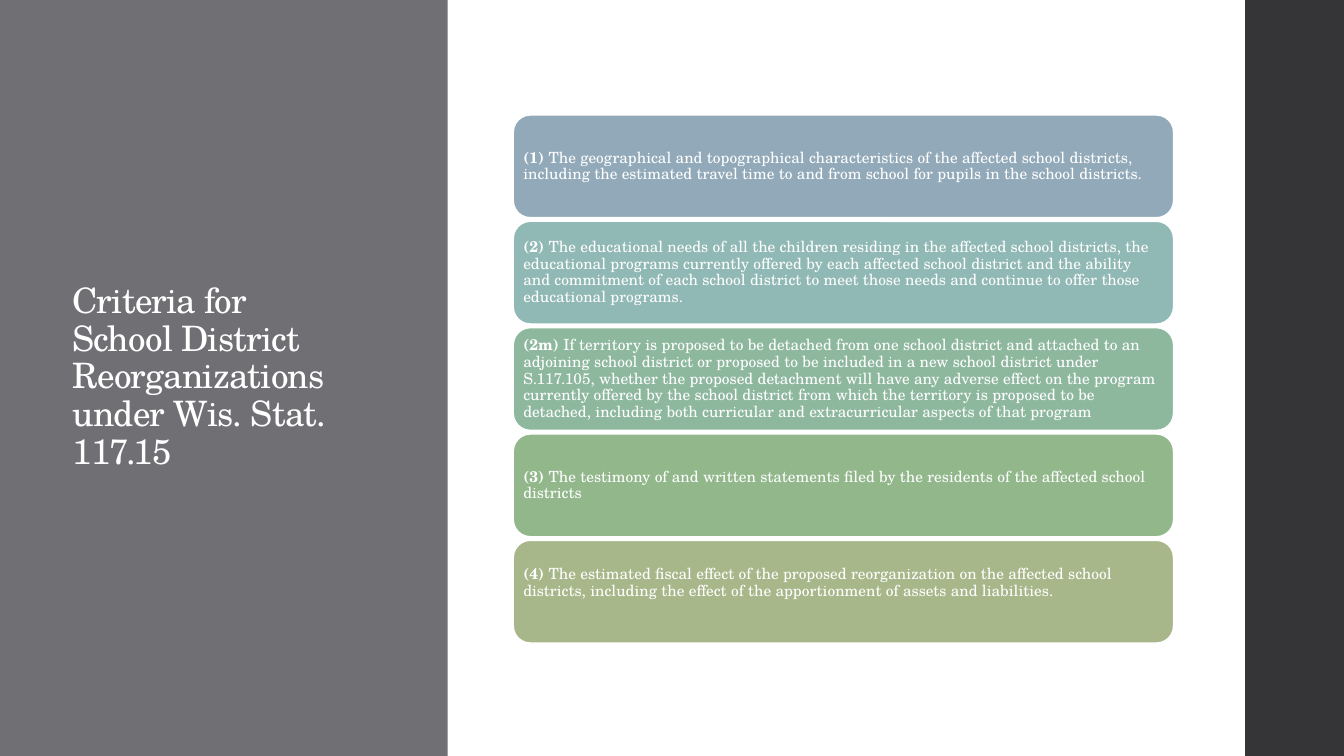
from pptx import Presentation
from pptx.dml.color import RGBColor
from pptx.enum.shapes import MSO_SHAPE as SHAPE
from pptx.enum.text import MSO_ANCHOR as ANCHOR, PP_ALIGN as ALIGN
from pptx.util import Inches, Pt

THEME = {
    "font": "TeX Gyre Schola",
    "text": "FFFFFF",
    "panel": "6F6F74",
    "edge": "353537",
    "cards": ["92A9B9", "90B8B4", "8EB89E", "91B78B", "A7B789"],
    "title_size": 25,
    "card_size": 11,
}


def add_run(p, text, size, bold=False, spacing=None):
    r = p.add_run()
    r.text = text
    r.font.name = THEME["font"]
    r.font.size = Pt(size)
    r.font.bold = bold
    r.font.color.rgb = RGBColor.from_string(THEME["text"])
    if spacing is not None:
        r._r.get_or_add_rPr().set("spc", str(int(spacing * 100)))


prs = Presentation()
prs.slide_width = Inches(13.33)
prs.slide_height = Inches(7.5)
s = prs.slides.add_slide(prs.slide_layouts[6])

for left, width, color in [(0, 4.44, "panel"), (12.35, 0.98, "edge")]:
    sp = s.shapes.add_shape(SHAPE.RECTANGLE, Inches(left), 0, Inches(width), prs.slide_height)
    sp.shadow.inherit = False
    sp.fill.solid()
    sp.fill.fore_color.rgb = RGBColor.from_string(THEME[color])
    sp.line.fill.background()

title = s.shapes.add_textbox(Inches(0.62), Inches(0.91), Inches(2.97), Inches(5.67))
tf = title.text_frame
tf.word_wrap = True
tf.vertical_anchor = ANCHOR.MIDDLE
p = tf.paragraphs[0]
p.line_spacing = 0.9
add_run(p, "Criteria for School District Reorganizations under Wis. Stat. 117.15",
        THEME["title_size"], spacing=-0.5)

criteria = [
    ("(1)", "The geographical and topographical characteristics of the affected school districts, "
     "including the estimated travel time to and from school for pupils in the school districts.", 0.05),
    ("(2)", "The educational needs of all the children residing in the affected school districts, "
     "the educational programs currently offered by each affected school district and the ability "
     "and commitment of each school district to meet those needs and continue to offer those "
     "educational programs.", 0.05),
    ("(2m)", "If territory is proposed to be detached from one school district and attached to an "
     "adjoining school district or proposed to be included in a new school district under S.117.105, "
     "whether the proposed detachment will have any adverse effect on the program currently offered "
     "by the school district from which the territory is proposed to be detached, including both "
     "curricular and extracurricular aspects of that program", 0.05),
    ("(3)", "The testimony of and written statements filed by the residents of the affected school "
     "districts", 0.05),
    ("(4)", "The estimated fiscal effect of the proposed reorganization on the affected school "
     "districts, including the effect of the apportionment of assets and liabilities.", 0.22),
]
first_top, last_top = 1.14, 5.36
step = (last_top - first_top) / (len(criteria) - 1)

for i, (number, text, bottom) in enumerate(criteria):
    card = s.shapes.add_shape(SHAPE.ROUNDED_RECTANGLE, Inches(5.09), Inches(first_top + i * step),
                              Inches(6.55), Inches(1.02))
    card.shadow.inherit = False
    card.fill.solid()
    card.fill.fore_color.rgb = RGBColor.from_string(THEME["cards"][i])
    card.line.color.rgb = RGBColor.from_string(THEME["text"])
    card.line.width = Pt(1.1)
    tf = card.text_frame
    tf.word_wrap = True
    tf.vertical_anchor = ANCHOR.MIDDLE
    tf.margin_left = tf.margin_right = tf.margin_top = Inches(0.05)
    tf.margin_bottom = Inches(bottom)
    p = tf.paragraphs[0]
    p.alignment = ALIGN.LEFT
    p.line_spacing = 0.9
    add_run(p, number + " ", THEME["card_size"], bold=True)
    add_run(p, text, THEME["card_size"])

prs.save("out.pptx")
